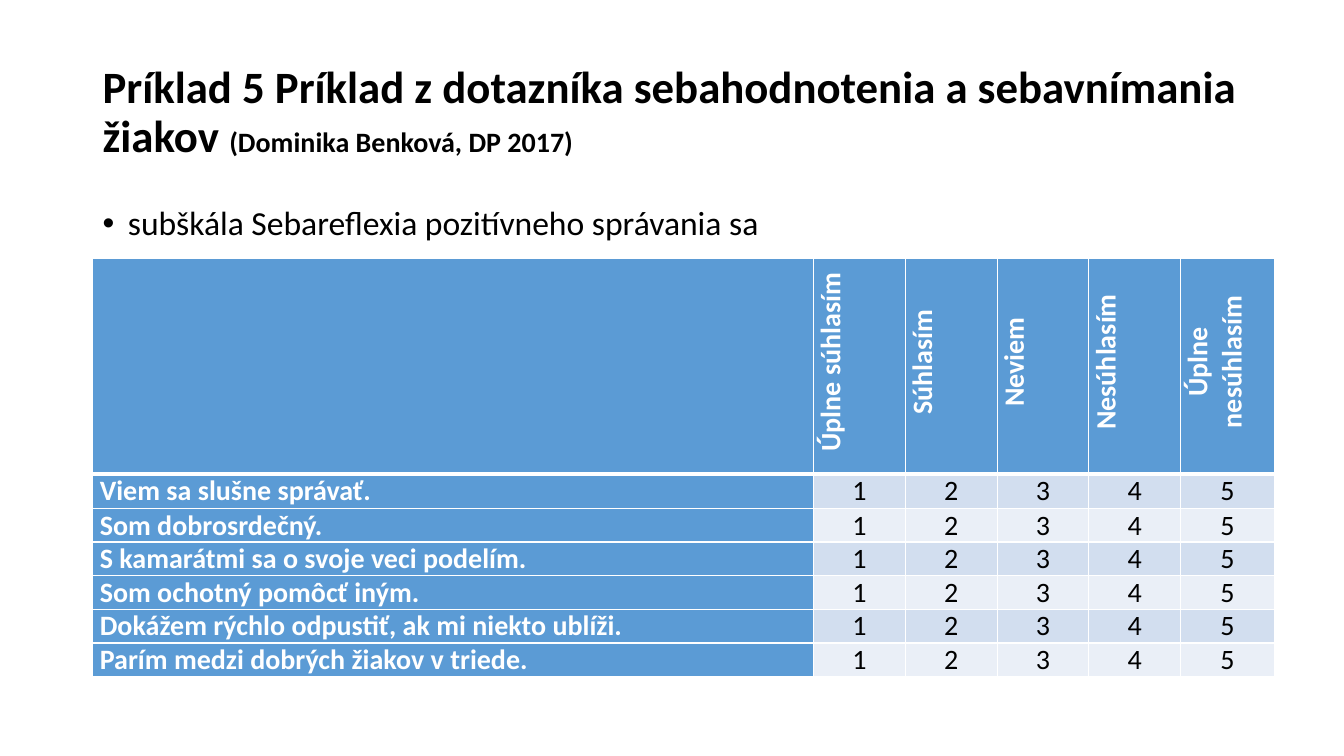
from dataclasses import dataclass

from lxml import etree
from pptx import Presentation
from pptx import util as u
from pptx.dml.color import RGBColor
from pptx.enum import text
from pptx.oxml import ns

COLORS = {"ink": "000000", "white": "FFFFFF", "blue": "5B9BD5",
          "band_dark": "D2DEEF", "band_light": "EAEFF7"}
FONT = "Calibri"
ANSWERS = ["Úplne súhlasím", "Súhlasím", "Neviem", "Nesúhlasím", "Úplne nesúhlasím"]
STATEMENTS = [
    "Viem sa slušne správať.",
    "Som dobrosrdečný.",
    "S kamarátmi sa o svoje veci podelím.",
    "Som ochotný pomôcť iným.",
    "Dokážem rýchlo odpustiť, ak mi niekto ublíži.",
    "Parím medzi dobrých žiakov v triede.",
]
COL_WIDTHS = [7.15, 0.91, 0.91, 0.91, 0.91, 0.93]
ROW_HEIGHTS = [1.6, 0.34, 0.33, 0.31, 0.31, 0.31, 0.31]


@dataclass
class Box:
    left: float
    top: float
    width: float
    height: float
    anchor: text.MSO_ANCHOR


@dataclass
class CellStyle:
    fill: str
    color: str = "white"
    bold: bool = True
    align: text.PP_ALIGN = text.PP_ALIGN.CENTER
    vertical: bool = False
    top_border: float = 1
    bottom_border: float = 1


def rgb(name: str) -> RGBColor:
    return RGBColor.from_string(COLORS[name])


def set_font(font, color: str, bold: bool, size: float) -> None:
    font.name = FONT
    font.size = u.Pt(size)
    font.bold = bold
    font.color.rgb = rgb(color)


def add_box(s, box: Box):
    sp = s.shapes.add_textbox(*map(u.Inches, (box.left, box.top, box.width, box.height)))
    tf = sp.text_frame
    tf.word_wrap = True
    tf.vertical_anchor = box.anchor
    p = tf.paragraphs[0]
    p.line_spacing = 0.9
    return p


def add_border(tc_pr, side: str, width: float) -> None:
    ln = etree.SubElement(tc_pr, ns.qn(f"a:ln{side}"), w=str(u.Pt(width)))
    fill = etree.SubElement(ln, ns.qn("a:solidFill"))
    etree.SubElement(fill, ns.qn("a:srgbClr"), val=COLORS["white"])


def fill_cell(cell, label: str, style: CellStyle) -> None:
    cell.margin_left = cell.margin_right = u.Inches(0.07)
    cell.margin_top = cell.margin_bottom = 0
    tc_pr = cell._tc.get_or_add_tcPr()
    for side, width in (("L", 1), ("R", 1), ("T", style.top_border), ("B", style.bottom_border)):
        add_border(tc_pr, side, width)
    cell.fill.solid()
    cell.fill.fore_color.rgb = rgb(style.fill)
    cell.text = label
    p = cell.text_frame.paragraphs[0]
    p.alignment = style.align
    set_font(p.font, style.color, style.bold, 20)
    if style.vertical:
        tc_pr.set("vert", "vert270")
        p._p.get_or_add_pPr().set("marL", str(u.Inches(0.08)))


def add_title(s) -> None:
    p = add_box(s, Box(0.92, 0.4, 11.5, 1.45, text.MSO_ANCHOR.MIDDLE))
    for words, size in (
        ("Príklad 5 Príklad z dotazníka sebahodnotenia a sebavnímania žiakov ", 32),
        ("(Dominika Benková, DP 2017)", 20),
    ):
        r = p.add_run()
        r.text = words
        set_font(r.font, "ink", True, size)


def add_subscale(s) -> None:
    p = add_box(s, Box(0.92, 2, 11.5, 4.76, text.MSO_ANCHOR.TOP))
    p.text = "subškála Sebareflexia pozitívneho správania sa"
    p.space_before = u.Pt(10)
    p_pr = p._p.get_or_add_pPr()
    p_pr.set("marL", str(u.Inches(0.25)))
    p_pr.set("indent", str(u.Inches(-0.25)))
    etree.SubElement(p_pr, ns.qn("a:buFont"), typeface="Arial")
    etree.SubElement(p_pr, ns.qn("a:buChar"), char="•")
    set_font(p.font, "ink", False, 24)


def add_questionnaire(s) -> None:
    frame = s.shapes.add_table(len(ROW_HEIGHTS), len(COL_WIDTHS),
                               *map(u.Inches, (0.92, 2.56, 11.71, 3.61)))
    table = frame.table
    table.first_row = table.horz_banding = False
    for column, width in zip(table.columns, COL_WIDTHS):
        column.width = u.Inches(width)
    for row, height in zip(table.rows, ROW_HEIGHTS):
        row.height = u.Inches(height)
    for c, label in enumerate(["", *ANSWERS]):
        fill_cell(table.cell(0, c), label,
                  CellStyle("blue", vertical=c > 0, bottom_border=3))
    for r, statement in enumerate(STATEMENTS, 1):
        top = 3 if r == 1 else 1
        band = "band_dark" if r % 2 else "band_light"
        fill_cell(table.cell(r, 0), statement,
                  CellStyle("blue", align=text.PP_ALIGN.JUSTIFY, top_border=top))
        for c in range(1, len(COL_WIDTHS)):
            fill_cell(table.cell(r, c), str(c), CellStyle(band, "ink", False, top_border=top))


def main() -> None:
    prs = Presentation()
    prs.slide_width, prs.slide_height = u.Inches(13.33), u.Inches(7.5)
    s = prs.slides.add_slide(prs.slide_layouts[6])
    add_title(s)
    add_subscale(s)
    add_questionnaire(s)
    prs.save("out.pptx")


if __name__ == "__main__":
    main()
